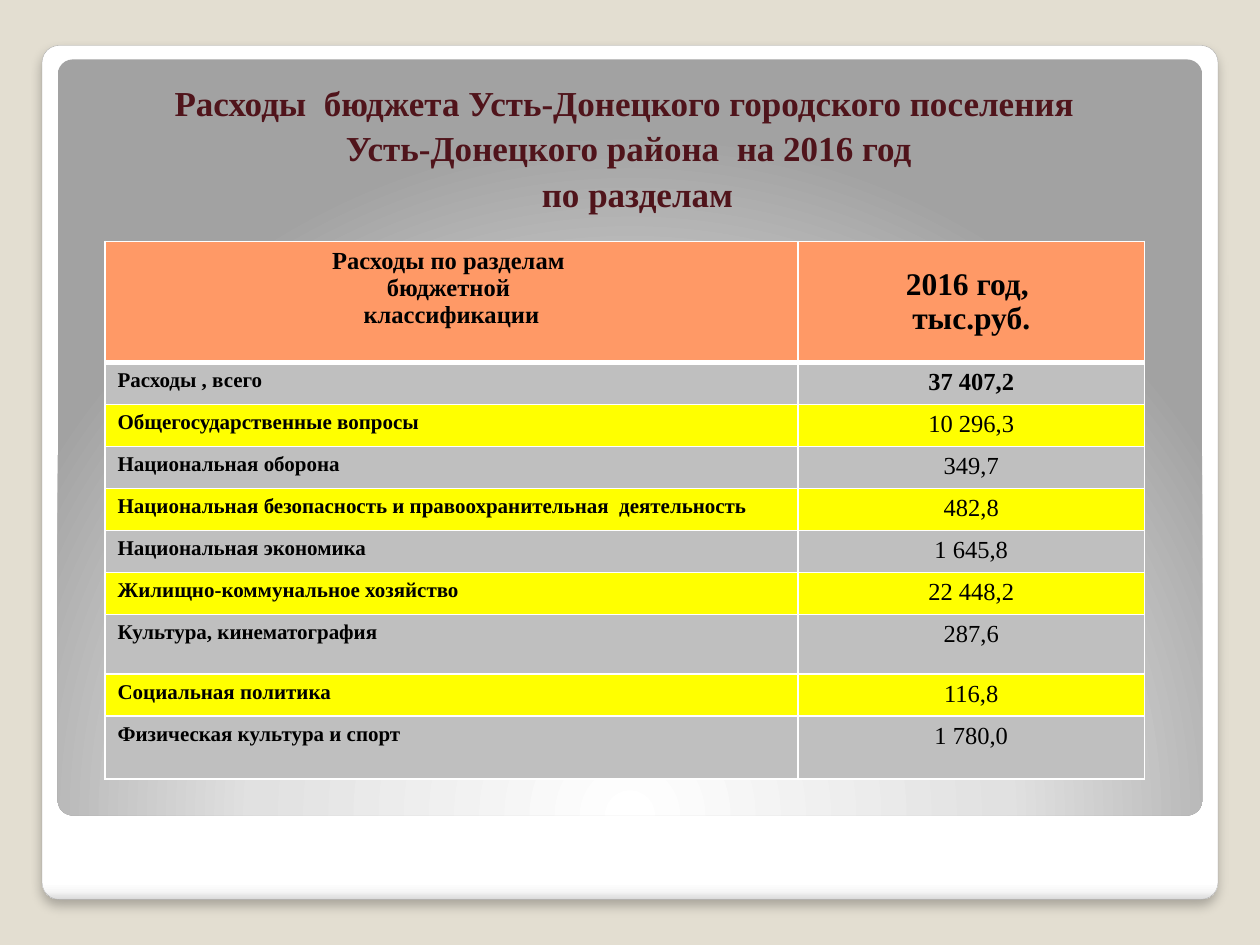
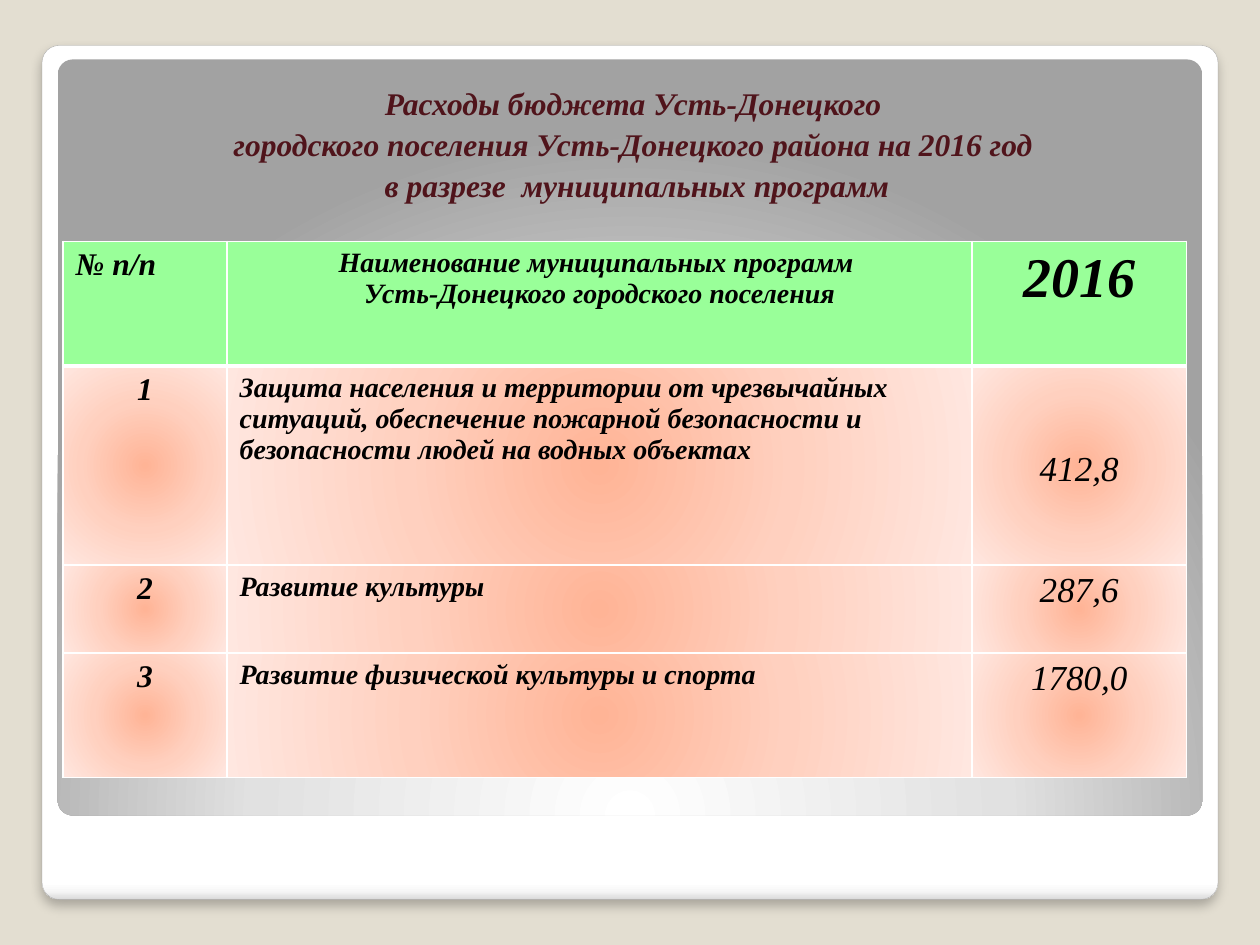
from lxml.etree import SubElement
from pptx import Presentation
from pptx.dml.color import RGBColor
from pptx.enum.shapes import MSO_SHAPE
from pptx.enum.text import MSO_ANCHOR, PP_ALIGN
from pptx.oxml.ns import qn
from pptx.util import Pt

FONT = "Times New Roman"
COLORS = {
    "background": "E3DED1", "frame line": "A4A4A4", "title": "50141B",
    "text": "000000", "border": "FFFFFF", "sections header": "FF9966",
    "gray row": "BFBFBF", "yellow row": "FFFF00", "programs header": "99FF99",
}
# Gradient stops: (position in percent, colour)
FRAME_STOPS = [(0, "FFFFFF"), (98, "FFFFFF"), (99, "F7F7F7"), (100, "DADADA")]
PANEL_STOPS = [(0, "FFFFFF"), (55, "E1E1E1"), (100, "A2A2A2")]
PEACH_STOPS = [(0, "FFB496"), (50, "FFD0BF"), (100, "FFE7E0")]

FRAME_BOX = (24, 26, 672, 488)
PANEL_BOX = (33, 34, 654, 432)

SECTIONS = [
    ("Расходы , всего", "37 407,2"),
    ("Общегосударственные вопросы", "10 296,3"),
    ("Национальная оборона", "349,7"),
    ("Национальная безопасность и правоохранительная  деятельность", "482,8"),
    ("Национальная экономика", "1 645,8"),
    ("Жилищно-коммунальное хозяйство", "22 448,2"),
    ("Культура, кинематография", "287,6"),
    ("Социальная политика", "116,8"),
    ("Физическая культура и спорт", "1 780,0"),
]
PROGRAMS = [
    ("Защита населения и территории от чрезвычайных ситуаций, обеспечение "
     "пожарной безопасности и безопасности людей на водных объектах", "412,8"),
    ("Развитие культуры", "287,6"),
    ("Развитие физической культуры и спорта", "1780,0"),
]


def rgb(name):
    return RGBColor.from_string(COLORS[name])


def points(box):
    return [Pt(length) for length in box]


def gradient(parent, stops, center=None):
    """Add a vertical gradient, or a circular one around center (l, t, r, b)."""
    fill = SubElement(parent, qn("a:gradFill"), rotWithShape="1")
    stop_list = SubElement(fill, qn("a:gsLst"))
    for position, color in stops:
        stop = SubElement(stop_list, qn("a:gs"), pos=str(position * 1000))
        SubElement(stop, qn("a:srgbClr"), val=color)
    if center:
        circle = SubElement(fill, qn("a:path"), path="circle")
        sides = {side: str(value * 1000) for side, value in zip("ltrb", center)}
        SubElement(circle, qn("a:fillToRect"), sides)
    else:
        SubElement(fill, qn("a:lin"), ang="5400000", scaled="0")


def rounded_box(slide, box, stops, center=None):
    shape = slide.shapes.add_shape(MSO_SHAPE.ROUNDED_RECTANGLE, *points(box))
    shape.adjustments[0] = 0.02
    gradient(shape._element.spPr, stops, center)
    return shape


def add_backdrop(slide):
    slide.background.fill.solid()
    slide.background.fill.fore_color.rgb = rgb("background")

    # White frame with a soft shadow below
    frame = rounded_box(slide, FRAME_BOX, FRAME_STOPS)
    frame.line.color.rgb = rgb("frame line")
    frame.line.width = Pt(0.16)
    effects = SubElement(frame._element.spPr, qn("a:effectLst"))
    shadow = SubElement(effects, qn("a:outerShdw"), blurRad=str(Pt(6)),
                        dist=str(Pt(4)), dir="5400000", algn="t", rotWithShape="0")
    shadow_color = SubElement(shadow, qn("a:srgbClr"), val="000000")
    SubElement(shadow_color, qn("a:alpha"), val="25000")

    # Gray panel lit from below
    panel = rounded_box(slide, PANEL_BOX, PANEL_STOPS, (50, 175, 50, -75))
    panel.line.fill.background()
    panel.shadow.inherit = False


def format_paragraph(paragraph, size, color, bold=True, italic=False, centered=True):
    paragraph.alignment = PP_ALIGN.CENTER if centered else PP_ALIGN.LEFT
    for run in paragraph.runs:
        run.font.name = FONT
        run.font.size = Pt(size)
        run.font.bold = bold
        run.font.italic = italic
        run.font.color.rgb = rgb(color)


def add_title(slide, box, text, size, italic=False):
    text_frame = slide.shapes.add_textbox(*points(box)).text_frame
    text_frame.word_wrap = True
    text_frame.vertical_anchor = MSO_ANCHOR.BOTTOM
    paragraph = text_frame.paragraphs[0]
    paragraph.text = text
    paragraph.line_spacing = 1.08
    format_paragraph(paragraph, size, "title", italic=italic)


def add_grid(slide, box, column_widths, row_heights):
    shape = slide.shapes.add_table(len(row_heights), len(column_widths), *points(box))
    table = shape.table
    for column, width in zip(table.columns, column_widths):
        column.width = Pt(width)
    for row, height in zip(table.rows, row_heights):
        row.height = Pt(height)
    # White rules, with a heavier one under the header
    for row_index, row in enumerate(table.rows):
        for cell in row.cells:
            properties = cell._tc.get_or_add_tcPr()
            for side in "LRTB":
                heavy = (row_index, side) in [(0, "B"), (1, "T")]
                line = SubElement(properties, qn(f"a:ln{side}"), w=str(Pt(3 if heavy else 1)))
                fill = SubElement(line, qn("a:solidFill"))
                SubElement(fill, qn("a:srgbClr"), val=COLORS["border"])
    return table


def fill_cell(cell, text, size, fill=None, **style):
    """Write a cell; without a fill colour it gets the peach glow."""
    cell.text_frame.text = text
    for paragraph in cell.text_frame.paragraphs:
        format_paragraph(paragraph, size, "text", **style)
    if fill:
        cell.fill.solid()
        cell.fill.fore_color.rgb = rgb(fill)
    else:
        gradient(cell._tc.get_or_add_tcPr(), PEACH_STOPS, (50, 50, 50, 50))


def add_sections_table(slide, box):
    width = box[2]
    heights = [69] + [22.7] * 6 + [34, 22.7, 36]
    table = add_grid(slide, box, [width * 2 / 3, width / 3], heights)
    header = "sections header"
    fill_cell(table.cell(0, 0), "Расходы по разделам \nбюджетной \nклассификации", 14, header)
    fill_cell(table.cell(0, 1), "2016 год, \nтыс.руб.", 18, header)
    table.cell(0, 1).vertical_anchor = MSO_ANCHOR.MIDDLE
    for index, (section, amount) in enumerate(SECTIONS, 1):
        fill = "gray row" if index % 2 else "yellow row"
        fill_cell(table.cell(index, 0), section, 12, fill, centered=False)
        fill_cell(table.cell(index, 1), amount, 14, fill, bold=index == 1)


def add_programs_table(slide, box):
    table = add_grid(slide, box, [93.8, 425.6, 122.6], [71.2, 113.6, 50.4, 71.2])
    header = "programs header"
    fill_cell(table.cell(0, 0), "№ п/п", 18, header, italic=True, centered=False)
    fill_cell(table.cell(0, 1), "Наименование муниципальных программ \n"
              "Усть-Донецкого городского поселения", 16, header, italic=True)
    fill_cell(table.cell(0, 2), "2016", 32, header, italic=True)
    for index, (program, amount) in enumerate(PROGRAMS, 1):
        fill_cell(table.cell(index, 0), str(index), 18, italic=True)
        fill_cell(table.cell(index, 1), program, 16, italic=True, centered=False)
        fill_cell(table.cell(index, 2), amount, 20, italic=True, bold=False)
    # The first amount sits two lines lower
    table.cell(1, 2).margin_top = Pt(48)


def build_sections_slide(slide):
    add_backdrop(slide)
    add_title(slide, (39.6, 41.8, 644.4, 84.2),
              "Расходы  бюджета Усть-Донецкого городского поселения  \v"
              "Усть-Донецкого района  на 2016 год \v по разделам", 20)
    add_sections_table(slide, (60, 138, 594, 298))


def build_programs_slide(slide):
    add_backdrop(slide)
    add_title(slide, (39.6, 48, 644.4, 72),
              "Расходы бюджета Усть-Донецкого\v"
              "городского поселения Усть-Донецкого района на 2016 год\v"
              " в разрезе  муниципальных программ", 18, italic=True)
    add_programs_table(slide, (36, 138, 642, 306.4))


def main():
    presentation = Presentation()
    presentation.slide_width, presentation.slide_height = Pt(720), Pt(540)
    blank = presentation.slide_layouts[6]
    for build in (build_sections_slide, build_programs_slide):
        build(presentation.slides.add_slide(blank))
    presentation.save("out.pptx")


if __name__ == "__main__":
    main()
